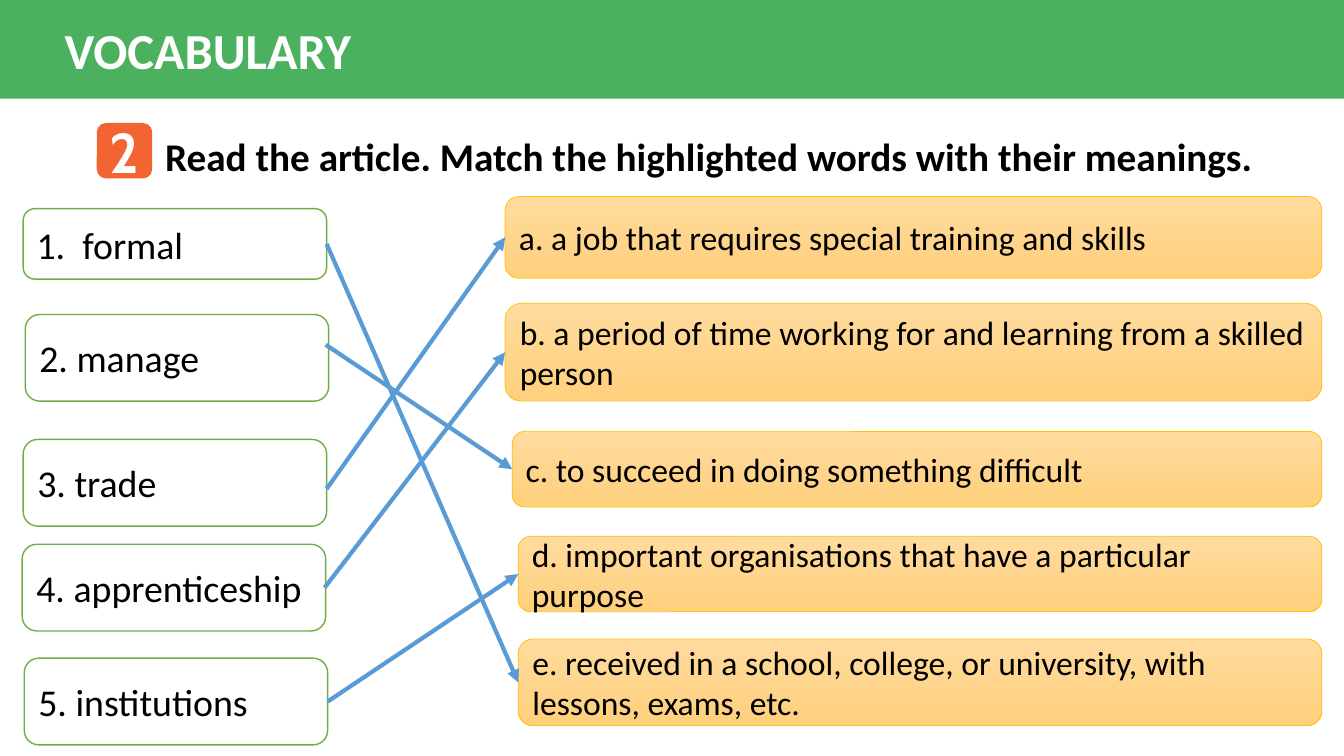
from pptx import Presentation
from pptx.dml.color import RGBColor
from pptx.enum.shapes import MSO_CONNECTOR, MSO_SHAPE
from pptx.enum.text import MSO_ANCHOR, PP_ALIGN
from pptx.oxml.ns import qn
from pptx.util import Inches, Pt
from lxml.etree import SubElement

# Content
TITLE = "VOCABULARY"
NUMBER = "2"
TASK = "Read the article. Match the highlighted words with their meanings."

# Word, left, top, height, arrow start (x, y), matching meaning
WORDS = [
    ("1.  formal", 0.23, 2.07, 0.70, (3.24, 2.42), "e"),
    ("2. manage", 0.25, 3.12, 0.86, (3.23, 3.42), "c"),
    ("3. trade", 0.23, 4.36, 0.86, (3.24, 4.85), "a"),
    ("4. apprenticeship", 0.22, 5.40, 0.86, (3.22, 5.83), "b"),
    ("5. institutions", 0.24, 6.53, 0.86, (3.25, 6.96), "d"),
]
# Meaning, left, top, height
MEANINGS = [
    ("a. a job that requires special training and skills", 5.01, 1.95, 0.81),
    ("b. a period of time working for and learning from a skilled person",
     5.01, 3.01, 0.97),
    ("c. to succeed in doing something difficult", 5.08, 4.28, 0.75),
    ("d. important organisations that have a particular purpose",
     5.14, 5.32, 0.75),
    ("e. received in a school, college, or university, with lessons, exams, etc.",
     5.14, 6.34, 0.86),
]
WIDTH, HEIGHT = 13.33, 7.5
WORD_WIDTH = 3.01
MEANINGS_RIGHT = 13.11
GREEN, ORANGE, BLUE = "4CB15F", "F26532", "5B9BD5"
WHITE, BLACK = "FFFFFF", "000000"


def colour(code):
    return RGBColor.from_string(code)


def inches(*lengths):
    return [Inches(length) for length in lengths]


def write(shape, text, size, code, font="Calibri", bold=False,
          align=PP_ALIGN.LEFT):
    frame = shape.text_frame
    frame.text = text
    frame.word_wrap = True
    frame.vertical_anchor = MSO_ANCHOR.MIDDLE
    para = frame.paragraphs[0]
    para.alignment = align
    style = para.runs[0].font
    style.name, style.size, style.bold = font, Pt(size), bold
    style.color.rgb = colour(code)


def add_box(kind, place, fill, line=None, line_width=1):
    box = page.shapes.add_shape(kind, *inches(*place))
    box.shadow.inherit = False
    if isinstance(fill, tuple):
        box.fill.gradient()
        box.fill.gradient_angle = 270
        for stop, code in zip(box.fill.gradient_stops, fill):
            stop.color.rgb = colour(code)
    else:
        box.fill.solid()
        box.fill.fore_color.rgb = colour(fill)
    if line:
        box.line.color.rgb = colour(line)
        box.line.width = Pt(line_width)
    else:
        box.line.fill.background()
    return box


def add_arrow(start, end):
    arrow = page.shapes.add_connector(
        MSO_CONNECTOR.STRAIGHT, *inches(*start, *end))
    arrow.line.color.rgb = colour(BLUE)
    arrow.line.width = Pt(3)
    properties = arrow.line._get_or_add_ln()
    SubElement(properties, qn("a:tailEnd"), type="triangle")
    SubElement(arrow._element.spPr, qn("a:effectLst"))


deck = Presentation()
deck.slide_width, deck.slide_height = inches(WIDTH, HEIGHT)
page = deck.slides.add_slide(deck.slide_layouts[5])

# Title band
title = page.shapes.title
title.left, title.top, title.width, title.height = inches(0, 0, WIDTH, 0.98)
title.fill.solid()
title.fill.fore_color.rgb = colour(GREEN)
write(title, TITLE, 36, WHITE, bold=True)
title.text_frame.margin_left = Inches(0.64)

# Numbered task
badge = add_box(MSO_SHAPE.ROUNDED_RECTANGLE, (0.96, 1.22, 0.55, 0.55), ORANGE)
write(badge, NUMBER, 40, WHITE, "Cabin", True, PP_ALIGN.CENTER)
badge.text_frame.margin_left = badge.text_frame.margin_right = 0
badge.text_frame.margin_top = badge.text_frame.margin_bottom = 0
task = page.shapes.add_textbox(*inches(1.54, 1.13, 11.47, 0.84))
write(task, TASK, 28, BLACK, bold=True)

# Meanings on the right, with the point where each arrow arrives
targets = {}
for text, left, top, height in MEANINGS:
    box = add_box(MSO_SHAPE.FLOWCHART_ALTERNATE_PROCESS,
                  (left, top, MEANINGS_RIGHT - left, height),
                  ("FFDB9E", "FFD07C"), "FFC000", 0.5)
    write(box, text, 24, BLACK)
    targets[text[0]] = (left, top + height / 2)

# Words on the left
for text, left, top, height, start, match in WORDS:
    box = add_box(MSO_SHAPE.FLOWCHART_ALTERNATE_PROCESS,
                  (left, top, WORD_WIDTH, height), WHITE, "70AD47")
    write(box, text, 27, BLACK)

# Arrows from each word to its meaning
for *_, start, match in WORDS:
    add_arrow(start, targets[match])

deck.save("out.pptx")
